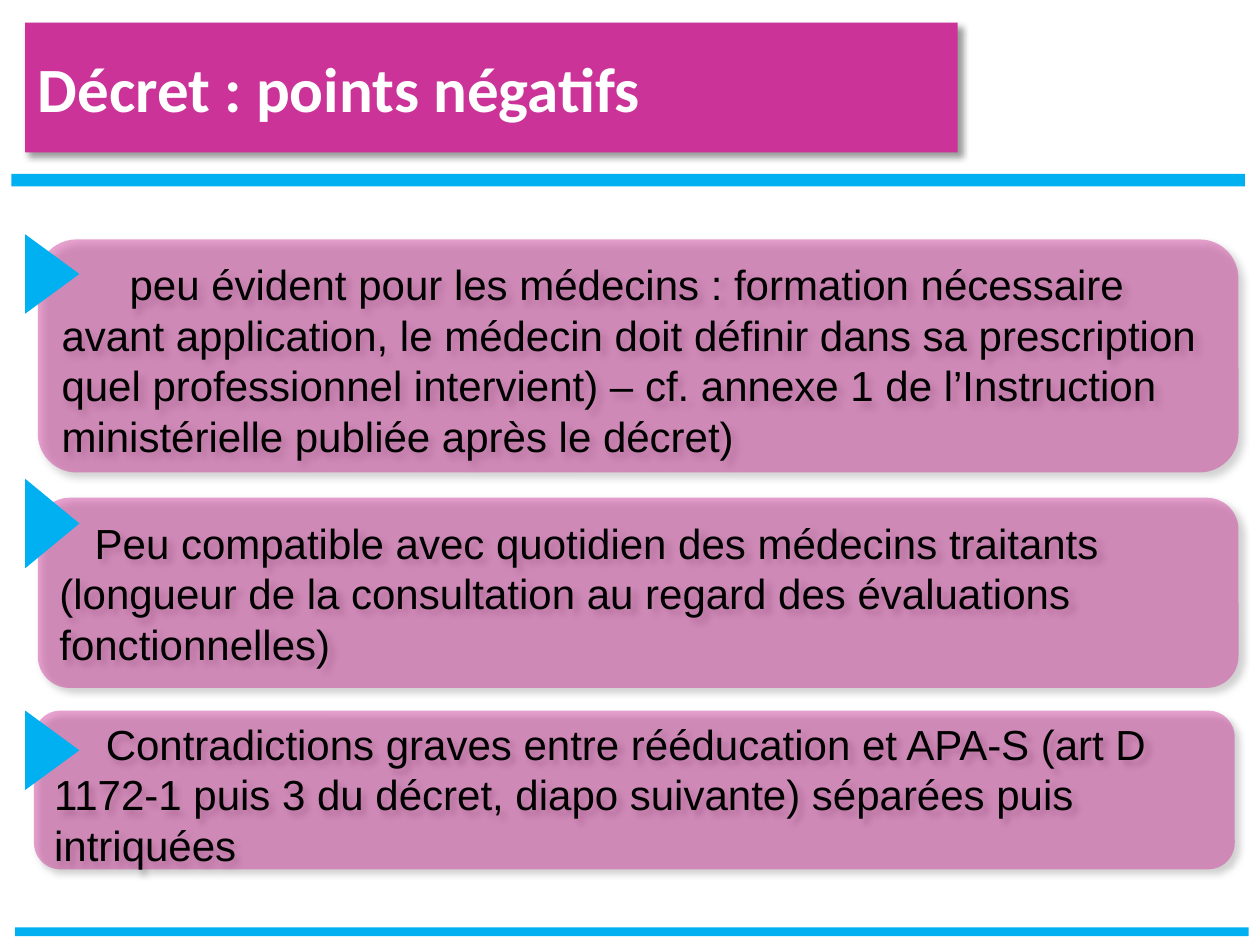
from dataclasses import dataclass

from lxml.etree import SubElement
from pptx import Presentation
from pptx.dml.color import RGBColor
from pptx.enum.shapes import MSO_SHAPE
from pptx.enum.text import MSO_ANCHOR, PP_ALIGN
from pptx.oxml.ns import qn
from pptx.util import Inches, Pt

PINK = RGBColor(0xCC, 0x33, 0x99)
BLUE = RGBColor(0x00, 0xB0, 0xF0)
WHITE = RGBColor(0xFF, 0xFF, 0xFF)
BLACK = RGBColor(0x00, 0x00, 0x00)


@dataclass(frozen=True)
class Area:
    left: float
    top: float
    width: float
    height: float

    def lengths(self) -> tuple:
        return tuple(Inches(n) for n in (self.left, self.top, self.width, self.height))


@dataclass(frozen=True)
class Point:
    text: str
    box: Area
    marker: Area
    indent: float
    inset_top: float = 0.05


TITLE = Area(0.2, 0.18, 7.4, 1.03)
BARS = (Area(0.09, 1.38, 9.79, 0.1), Area(0.12, 7.36, 9.79, 0.07))
POINTS = (
    Point(
        "Contradictions graves entre rééducation et APA-S (art D 1172-1 puis 3 "
        "du décret, diapo suivante) séparées puis intriquées",
        Area(0.27, 5.64, 9.53, 1.26), Area(0.1, 5.74, 0.63, 0.43), 0.41, 0.11,
    ),
    Point(
        "Peu compatible avec quotidien des médecins traitants (longueur de la "
        "consultation au regard des évaluations fonctionnelles)",
        Area(0.3, 3.95, 9.53, 1.51), Area(0.06, 3.94, 0.71, 0.43), 0.28,
    ),
    Point(
        "peu évident pour les médecins : formation nécessaire avant application, "
        "le médecin doit définir dans sa prescription quel professionnel intervient) "
        "– cf. annexe 1 de l’Instruction ministérielle publiée après le décret)",
        Area(0.3, 1.9, 9.53, 1.85), Area(0.1, 1.96, 0.63, 0.43), 0.54, 0.11,
    ),
)


def add_shadow(shape) -> None:
    properties = shape._element.spPr
    for effects in properties.findall(qn("a:effectLst")):
        properties.remove(effects)
    effects = SubElement(properties, qn("a:effectLst"))
    shadow = SubElement(
        effects, qn("a:outerShdw"), blurRad=str(Pt(4)), dist=str(Pt(3)),
        dir=str(45 * 60000), algn="tl", rotWithShape="0",
    )
    color = SubElement(shadow, qn("a:srgbClr"), val=str(BLACK))
    SubElement(color, qn("a:alpha"), val="40000")


def add_filled(slide, kind: MSO_SHAPE, area: Area, color: RGBColor):
    shape = slide.shapes.add_shape(kind, *area.lengths())
    shape.fill.solid()
    shape.fill.fore_color.rgb = color
    shape.line.fill.background()
    shape.shadow.inherit = False
    return shape


def write_text(shape, text: str, *, size: float, font: str, color: RGBColor,
               bold: bool = False, indent: float = 0, inset_top: float = 0.05) -> None:
    frame = shape.text_frame
    frame.word_wrap = True
    frame.vertical_anchor = MSO_ANCHOR.MIDDLE
    frame.margin_top = Inches(inset_top)
    para = frame.paragraphs[0]
    para.alignment = PP_ALIGN.LEFT
    if indent:
        para._p.get_or_add_pPr().set("indent", str(Inches(indent)))
    span = para.add_run()
    span.text = text
    span.font.size = Pt(size)
    span.font.name = font
    span.font.bold = bold
    span.font.color.rgb = color


def format_title(title, text: str) -> None:
    title.left, title.top, title.width, title.height = TITLE.lengths()
    geometry = SubElement(title._element.spPr, qn("a:prstGeom"), prst="roundRect")
    SubElement(geometry, qn("a:avLst"))
    title.fill.solid()
    title.fill.fore_color.rgb = PINK
    title.line.fill.background()
    add_shadow(title)
    write_text(title, text, size=36, font="Calibri", color=WHITE, bold=True)


def add_point(slide, point: Point) -> None:
    box = add_filled(slide, MSO_SHAPE.ROUNDED_RECTANGLE, point.box, PINK)
    color = box._element.spPr.find(qn("a:solidFill")).find(qn("a:srgbClr"))
    SubElement(color, qn("a:alpha"), val="45000")
    add_shadow(box)
    write_text(box, point.text, size=24, font="Arial", color=BLACK,
               indent=point.indent, inset_top=point.inset_top)
    marker = add_filled(slide, MSO_SHAPE.ISOSCELES_TRIANGLE, point.marker, BLUE)
    marker.rotation = 90


def main() -> None:
    deck = Presentation()
    deck.slide_width, deck.slide_height = Inches(10), Inches(7.5)
    slide = deck.slides.add_slide(deck.slide_layouts[5])
    format_title(slide.shapes.title, "Décret : points négatifs")
    for bar in BARS:
        add_filled(slide, MSO_SHAPE.RECTANGLE, bar, BLUE)
    for point in POINTS:
        add_point(slide, point)
    deck.save("out.pptx")


if __name__ == "__main__":
    main()
